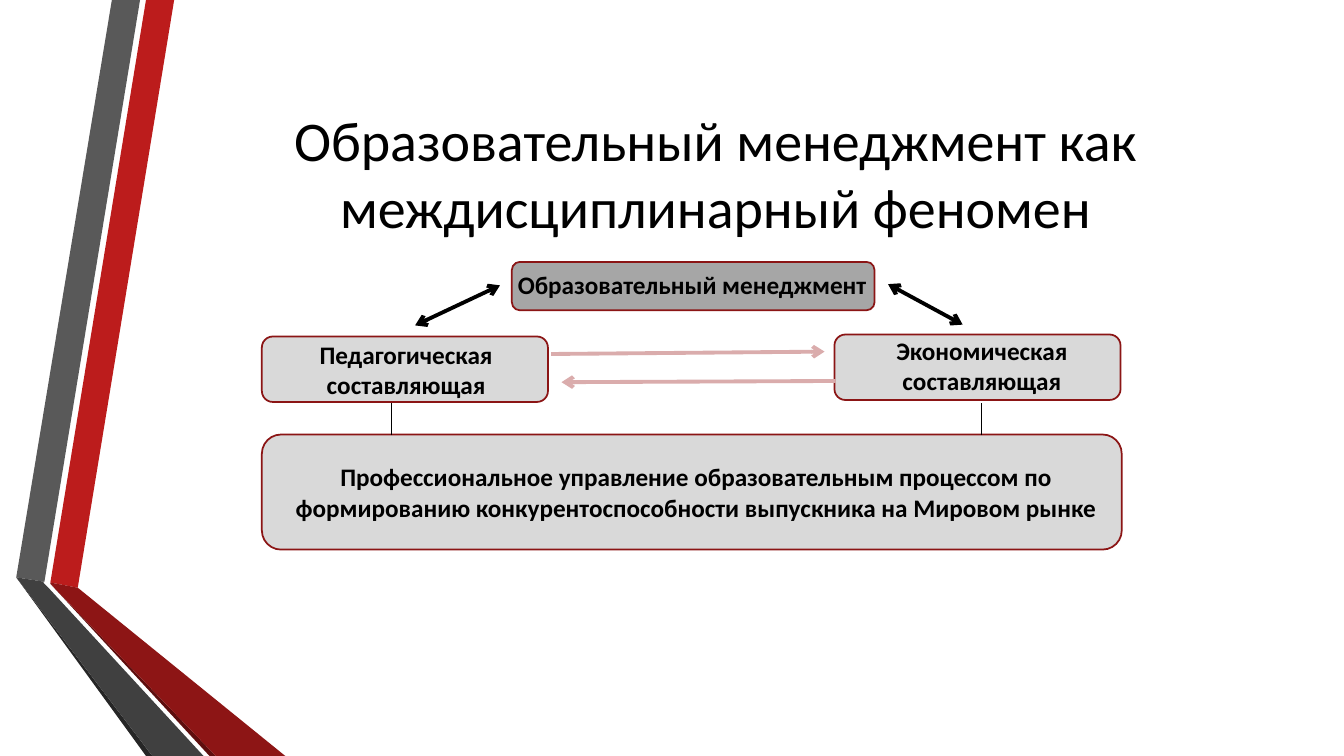
import pptx
import pptx.dml.color
import pptx.enum.shapes
import pptx.enum.text
import pptx.oxml.ns
import pptx.util
from lxml import etree

Cm = pptx.util.Cm
Pt = pptx.util.Pt
RGBColor = pptx.dml.color.RGBColor
PP_ALIGN = pptx.enum.text.PP_ALIGN
MSO_ANCHOR = pptx.enum.text.MSO_ANCHOR

BLACK = RGBColor(0x00, 0x00, 0x00)
RED = RGBColor(0xBC, 0x1C, 0x1C)
DEEP_RED = RGBColor(0x8D, 0x15, 0x15)
SHADOW_RED = RGBColor(0x5E, 0x0E, 0x0E)
OUTLINE_RED = RGBColor(0x8B, 0x15, 0x15)
PINK = RGBColor(0xDA, 0xAC, 0xAC)
GRAY = RGBColor(0x59, 0x59, 0x59)
DEEP_GRAY = RGBColor(0x40, 0x40, 0x40)
SHADOW_GRAY = RGBColor(0x26, 0x26, 0x26)
MIDDLE_GRAY = RGBColor(0xA6, 0xA6, 0xA6)
LIGHT_GRAY = RGBColor(0xD9, 0xD9, 0xD9)

RIBBONS = [
    (RED, [(1.27, 14.68), (1.96, 14.81), (4.39, 0), (3.68, 0)]),
    (GRAY, [(3.53, 0), (2.82, 0), (0.41, 14.55), (1.12, 14.66)]),
    (SHADOW_GRAY, [(0.41, 14.55), (3.68, 19.05), (3.84, 19.05)]),
    (SHADOW_RED, [(1.27, 14.71), (5.28, 19.05), (5.44, 19.05)]),
    (DEEP_RED, [(1.27, 14.71), (5.44, 19.05), (7.19, 19.05),
                (1.96, 14.81), (1.27, 14.68)]),
    (DEEP_GRAY, [(5.13, 19.05), (1.22, 14.81), (1.09, 14.68),
                 (1.12, 14.66), (0.41, 14.55), (3.84, 19.05)]),
]


def add_ribbon(slide, color, points):
    corners = [(Cm(x), Cm(y)) for x, y in points]
    builder = slide.shapes.build_freeform(*corners[0])
    builder.add_line_segments(corners[1:], close=True)
    shape = builder.convert_to_shape()
    shape.shadow.inherit = False
    shape.fill.solid()
    shape.fill.fore_color.rgb = color
    shape.line.fill.background()


def add_panel(slide, left, top, width, height, color):
    shape = slide.shapes.add_shape(
        pptx.enum.shapes.MSO_SHAPE.ROUNDED_RECTANGLE,
        Cm(left), Cm(top), Cm(width), Cm(height))
    shape.shadow.inherit = False
    shape.fill.solid()
    shape.fill.fore_color.rgb = color
    shape.line.color.rgb = OUTLINE_RED
    shape.line.width = Pt(1.25)


def add_text(slide, left, top, width, height, lines, size=18, bold=True,
             alignment=PP_ALIGN.CENTER, anchor=MSO_ANCHOR.TOP):
    box = slide.shapes.add_textbox(Cm(left), Cm(top), Cm(width), Cm(height))
    frame = box.text_frame
    frame.word_wrap = True
    frame.vertical_anchor = anchor
    for index, line in enumerate(lines):
        paragraph = frame.add_paragraph() if index else frame.paragraphs[0]
        paragraph.alignment = alignment
        run = paragraph.add_run()
        run.text = line
        run.font.name = "Calibri"
        run.font.size = Pt(size)
        run.font.bold = bold
        run.font.color.rgb = BLACK


def add_line(slide, start, end, color=BLACK, width=2.75, arrowheads=()):
    connector = slide.shapes.add_connector(
        pptx.enum.shapes.MSO_CONNECTOR.STRAIGHT,
        Cm(start[0]), Cm(start[1]), Cm(end[0]), Cm(end[1]))
    connector.line.color.rgb = color
    connector.line.width = Pt(width)
    line = connector.line._get_or_add_ln()
    for arrowhead in arrowheads:
        etree.SubElement(line, pptx.oxml.ns.qn("a:" + arrowhead), type="arrow")
    etree.SubElement(connector._element.spPr, pptx.oxml.ns.qn("a:effectLst"))


def main():
    presentation = pptx.Presentation()
    presentation.slide_width = Cm(33.87)
    presentation.slide_height = Cm(19.05)
    slide = presentation.slides.add_slide(presentation.slide_layouts[6])

    for color, points in RIBBONS:
        add_ribbon(slide, color, points)

    add_text(slide, 4.11, 1.9, 27.84, 4.88,
             ["Образовательный менеджмент как междисциплинарный феномен"],
             size=40, bold=False, anchor=MSO_ANCHOR.MIDDLE)

    add_panel(slide, 12.9, 6.6, 9.14, 1.22, MIDDLE_GRAY)
    add_text(slide, 12.8, 6.65, 9.93, 1.02, ["Образовательный менеджмент"],
             alignment=PP_ALIGN.LEFT)

    add_panel(slide, 6.6, 8.48, 7.21, 1.65, LIGHT_GRAY)
    add_panel(slide, 21.03, 8.43, 7.21, 1.65, LIGHT_GRAY)
    add_text(slide, 6.83, 8.43, 6.81, 1.8, ["Педагогическая", "составляющая"])
    add_text(slide, 21.34, 8.33, 6.81, 1.8, ["Экономическая", "составляющая"])

    both_ends = ("headEnd", "tailEnd")
    add_line(slide, (10.46, 8.2), (12.6, 7.19), arrowheads=both_ends)
    add_line(slide, (22.38, 7.16), (24.26, 8.18), arrowheads=both_ends)
    add_line(slide, (13.89, 8.92), (20.78, 8.86), PINK, arrowheads=("tailEnd",))
    add_line(slide, (21.06, 9.6), (14.15, 9.63), PINK, arrowheads=("tailEnd",))

    add_panel(slide, 6.6, 10.95, 21.67, 2.9, LIGHT_GRAY)
    add_text(slide, 6.93, 11.51, 21.23, 1.8, [
        "Профессиональное управление образовательным процессом по",
        "формированию конкурентоспособности выпускника на Мировом рынке"])
    for x in (9.86, 24.74):
        add_line(slide, (x, 10.97), (x, 10.15), width=0.75)

    presentation.save("out.pptx")


if __name__ == "__main__":
    main()
